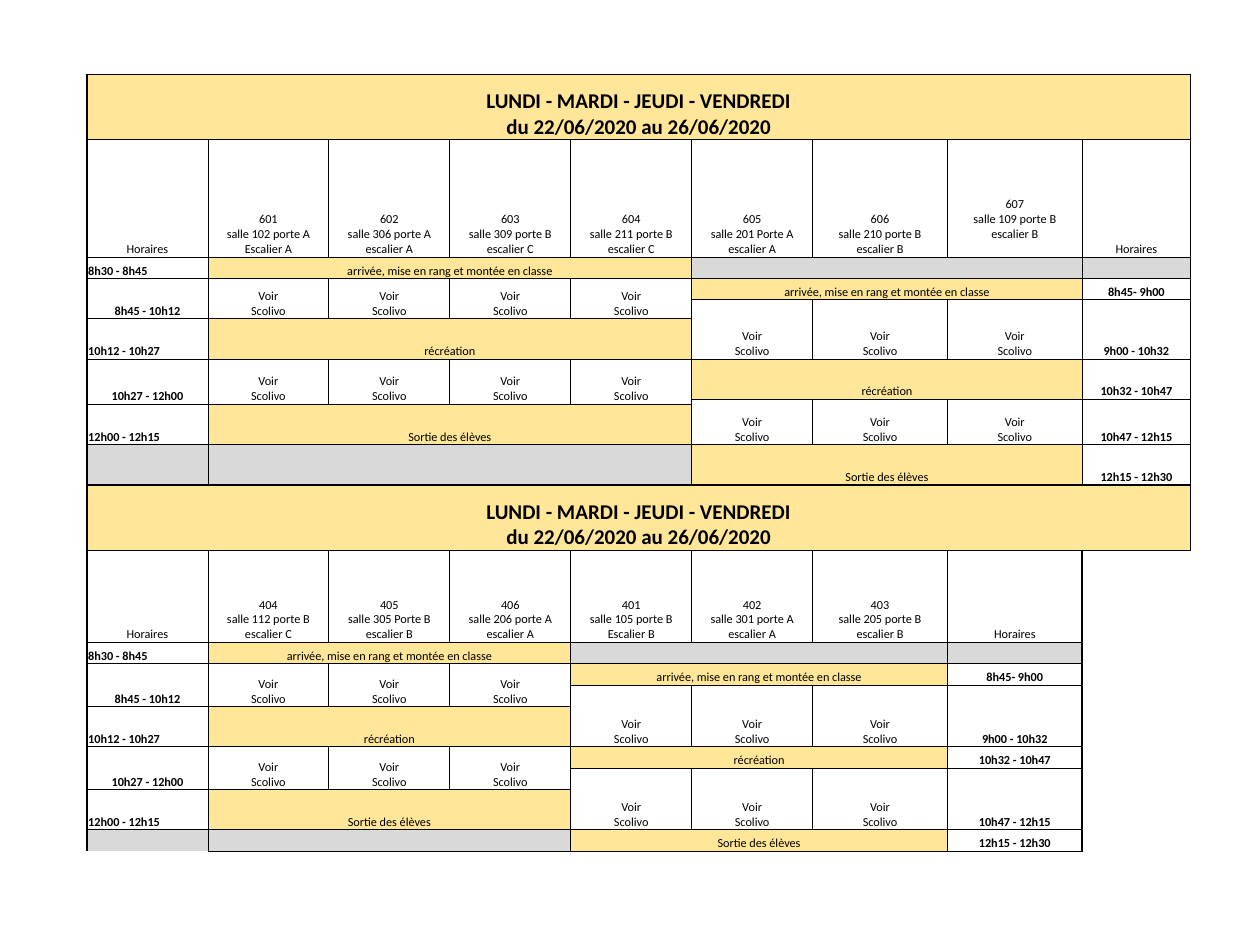
"""Build the weekly timetable slide with two class groups in one table."""
from copy import deepcopy
from dataclasses import dataclass
from typing import Optional

from lxml import etree
from pptx import Presentation
from pptx.dml.color import RGBColor
from pptx.enum import text
from pptx.oxml import ns
from pptx.util import Inches, Pt


@dataclass(frozen=True)
class Theme:
    font: str = "Calibri"
    ink: str = "000000"
    highlight: str = "FFE699"
    closed: str = "D9D9D9"
    title_size: float = 12
    body_size: float = 7
    thin: float = 0.5
    thick: float = 1


@dataclass(frozen=True)
class Slot:
    row: int
    height: int
    hours: str
    activity: str


@dataclass(frozen=True)
class Group:
    top: int
    early: tuple[str, ...]
    late: tuple[str, ...]


@dataclass(frozen=True)
class Area:
    row: int
    column: int
    height: int = 1
    width: int = 1


THEME = Theme()
TITLE = "LUNDI - MARDI - JEUDI - VENDREDI\ndu 22/06/2020 au 26/06/2020"
ARRIVAL = "arrivée, mise en rang et montée en classe"
LESSON = "Voir\nScolivo"
BREAK = "récréation"
EXIT = "Sortie des élèves"
COLUMN_WIDTHS = [0.96] * 6 + [1.07, 1.07, 0.86]
ROW_HEIGHTS = [0.52, 0.93, 0.17, 0.17, 0.15, 0.32, 0.32, 0.04, 0.32, 0.32,
               0.52, 0.73, 0.17, 0.17, 0.17, 0.32, 0.17, 0.17, 0.32, 0.17]
EARLY_SLOTS = [
    Slot(2, 1, "8h30 - 8h45", ARRIVAL),
    Slot(3, 2, "8h45 - 10h12", LESSON),
    Slot(5, 1, "10h12 - 10h27", BREAK),
    Slot(6, 2, "10h27 - 12h00", LESSON),
    Slot(8, 1, "12h00 - 12h15", EXIT),
    Slot(9, 1, "", ""),
]
LATE_SLOTS = [
    Slot(2, 1, "", ""),
    Slot(3, 1, "8h45- 9h00", ARRIVAL),
    Slot(4, 2, "9h00 - 10h32", LESSON),
    Slot(6, 1, "10h32 - 10h47", BREAK),
    Slot(7, 2, "10h47 - 12h15", LESSON),
    Slot(9, 1, "12h15 - 12h30", EXIT),
]
GROUPS = [
    Group(0,
          ("601\nsalle 102 porte A\nEscalier A", "602\nsalle 306 porte A\nescalier A",
           "603\nsalle 309 porte B\nescalier C", "604\nsalle 211 porte B\nescalier C"),
          ("605\nsalle 201 Porte A\nescalier A", "606\nsalle 210 porte B\nescalier B",
           "607\nsalle 109 porte B\nescalier B")),
    Group(10,
          ("404\nsalle 112 porte B\nescalier C", "405\nsalle 305 Porte B\nescalier B",
           "406\nsalle 206 porte A\nescalier A"),
          ("401\nsalle 105 porte B\nEscalier B", "402\nsalle 301 porte A\nescalier A",
           "403\nsalle 205 porte B\nescalier B")),
]


def add_border(cell, side: str, weight: float, position: int) -> None:
    """Add one solid border to a cell."""
    properties = cell._tc.get_or_add_tcPr()
    line = etree.Element(ns.qn(f"a:ln{side}"), w=str(Pt(weight)))
    solid = etree.SubElement(line, ns.qn("a:solidFill"))
    etree.SubElement(solid, ns.qn("a:srgbClr"), val=THEME.ink)
    properties.insert(position, line)


def prepare(cell) -> None:
    """Give a cell its margins, anchor and empty-line size."""
    margin = Inches(0.01)
    formats = {"margin_left": margin, "margin_right": margin, "margin_top": margin,
               "margin_bottom": 0, "vertical_anchor": text.MSO_ANCHOR.BOTTOM}
    for name, value in formats.items():
        setattr(cell, name, value)
    etree.SubElement(cell.text_frame.paragraphs[0]._p, ns.qn("a:endParaRPr"),
                     sz=str(int(THEME.body_size * 100)))


def write(cell, wording: str, size: float, bold: bool, centred: bool) -> None:
    """Write formatted lines into a cell."""
    paragraph = cell.text_frame.paragraphs[0]
    paragraph.text = wording
    paragraph.alignment = text.PP_ALIGN.CENTER if centred else text.PP_ALIGN.LEFT
    for run in paragraph.runs:
        for name, value in {"name": THEME.font, "size": Pt(size), "bold": bold}.items():
            setattr(run.font, name, value)
        run.font.color.rgb = RGBColor.from_string(THEME.ink)
    for line_break in paragraph._p.findall(ns.qn("a:br")):
        line_break.append(deepcopy(paragraph.runs[0]._r.rPr))


def fill_area(table, area: Area, wording: str, fill: Optional[str] = None,
              size: float = THEME.body_size, bold: bool = False, centred: bool = True,
              heavy: str = "", hidden: str = ""):
    """Merge, colour, outline and label one area of the timetable."""
    bottom, right = area.row + area.height - 1, area.column + area.width - 1
    origin = table.cell(area.row, area.column)
    if area.height * area.width > 1:
        origin.merge(table.cell(bottom, right))
    for row in range(area.row, bottom + 1):
        for column in range(area.column, right + 1):
            cell = table.cell(row, column)
            first = (row, column) == (area.row, area.column)
            if fill:
                cell.fill.solid()
                cell.fill.fore_color.rgb = RGBColor.from_string(fill)
            edges = {"L": column == area.column, "R": first or column == right,
                     "T": row == area.row, "B": first or row == bottom}
            sides = [side for side, outer in edges.items() if outer and side not in hidden]
            for position, side in enumerate(sides):
                add_border(cell, side, THEME.thick if side in heavy else THEME.thin, position)
    if wording:
        write(origin, wording, size, bold, centred)
    return origin


def draw_track(table, group: Group, slots: list[Slot], first: int, count: int,
               hours_column: int, edge: str) -> None:
    """Draw the hours and activities shared by neighbouring classes."""
    for slot in slots:
        row = group.top + slot.row
        closing = slot.row == 9
        base = "B" if closing and group.top == 0 else ""
        hidden = "B" if closing and edge == "L" and group.top else ""
        fill_area(table, Area(row, hours_column, slot.height), slot.hours,
                  None if slot.hours else THEME.closed, bold=True,
                  centred=edge == "R" or slot.height > 1, heavy=edge + base, hidden=hidden)
        if slot.activity == LESSON:
            for column in range(first, first + count):
                fill_area(table, Area(row, column, slot.height), LESSON)
        else:
            fill_area(table, Area(row, first, slot.height, count), slot.activity,
                      THEME.highlight if slot.activity else THEME.closed, heavy=base)


def draw_group(table, group: Group) -> None:
    """Draw the title, the class headings and both tracks of a group."""
    classes = group.early + group.late
    last = len(classes) + 1
    fill_area(table, Area(group.top, 0, 1, len(COLUMN_WIDTHS)), TITLE, THEME.highlight,
              THEME.title_size, bold=True, heavy="LTR")
    for column, heading in enumerate(("Horaires", *classes, "Horaires")):
        heavy = {0: "L", last: "R"}.get(column, "")
        cell = fill_area(table, Area(group.top + 1, column), heading, heavy=heavy)
        if heading.startswith("607"):
            cell.margin_bottom = Inches(0.12)
    early_count = len(group.early)
    draw_track(table, group, EARLY_SLOTS, 1, early_count, 0, "L")
    draw_track(table, group, LATE_SLOTS, 1 + early_count, len(group.late), last, "R")


def main() -> None:
    """Create and save the timetable."""
    deck = Presentation()
    deck.slide_width, deck.slide_height = Inches(10), Inches(7.5)
    slide = deck.slides.add_slide(deck.slide_layouts[6])
    frame = slide.shapes.add_table(len(ROW_HEIGHTS), len(COLUMN_WIDTHS), Inches(0.69),
                                   Inches(0.59), Inches(8.75), Inches(6.18))
    table = frame.table
    table.first_row = table.horz_banding = False
    style = table._tbl.tblPr.find(ns.qn("a:tableStyleId"))
    style.text = "{2D5ABB26-0587-4C30-8999-92F81FD0307C}"
    for column, width in zip(table.columns, COLUMN_WIDTHS):
        column.width = Inches(width)
    for row, height in zip(table.rows, ROW_HEIGHTS):
        row.height = Inches(height)
    for cell in table.iter_cells():
        prepare(cell)
    for group in GROUPS:
        draw_group(table, group)
    deck.save("out.pptx")


if __name__ == "__main__":
    main()
